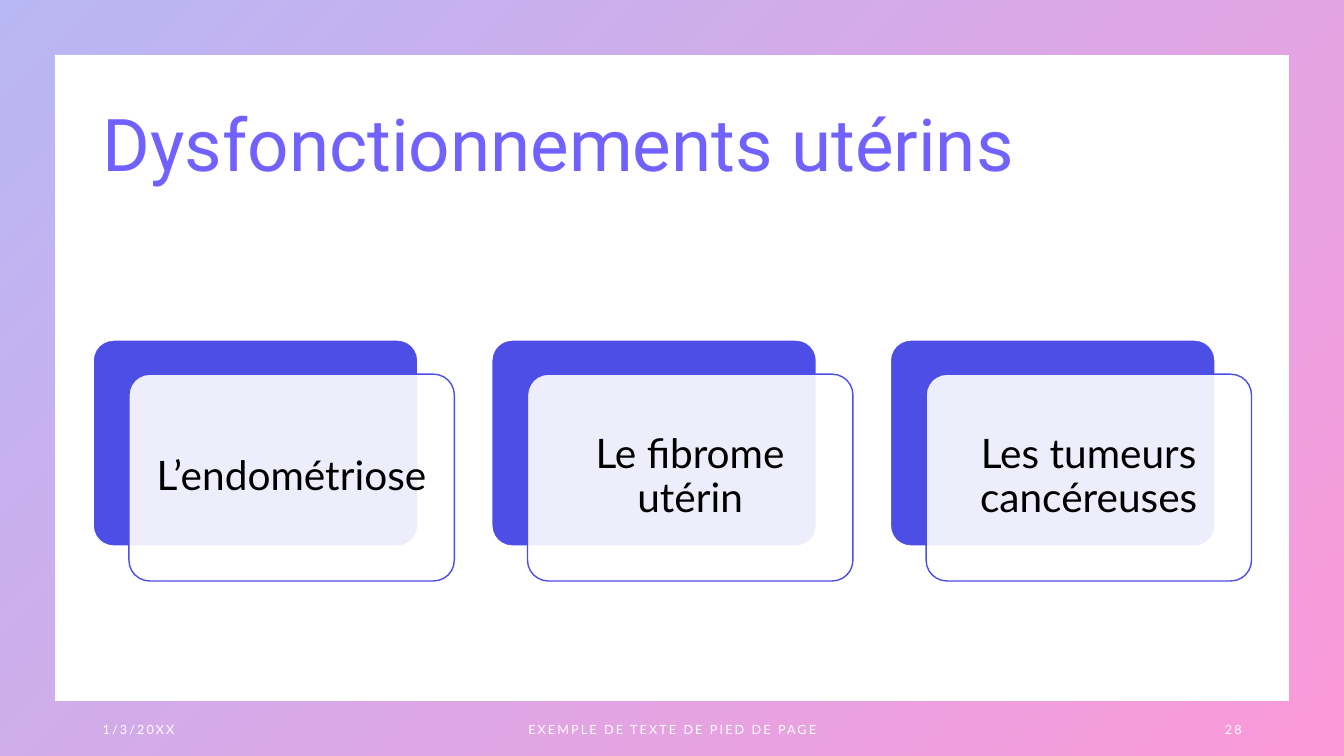
from pptx import Presentation
from pptx.dml.color import RGBColor
from pptx.enum.shapes import MSO_SHAPE
from pptx.enum.text import MSO_ANCHOR, PP_ALIGN
from pptx.oxml.ns import qn
from pptx.util import Cm, Pt
from lxml.etree import SubElement

COLORS = {"blue": "4D4EE6", "pink": "F900A0", "violet": "7162FE",
          "white": "FFFFFF", "black": "000000"}


def rgb(name):
    """Return the named colour."""
    return RGBColor.from_string(COLORS[name])


def set_alpha(fill_xml, percent):
    """Give every colour below an element the same opacity."""
    for clr in fill_xml.iter(qn("a:srgbClr")):
        SubElement(clr, qn("a:alpha"), val=str(percent * 1000))


def add_text(s, text, x, y, w, h, size=9, font="Lato", color="white",
             align=PP_ALIGN.LEFT, inset=None, line=1.0, after=0, spacing=0):
    """Add a vertically centred text box, measured in centimetres."""
    tf = s.shapes.add_textbox(Cm(x), Cm(y), Cm(w), Cm(h)).text_frame
    tf.word_wrap = True
    tf.vertical_anchor = MSO_ANCHOR.MIDDLE
    if inset is not None:
        tf.margin_left = tf.margin_right = Cm(inset)
        tf.margin_top = tf.margin_bottom = Cm(inset)
    p = tf.paragraphs[0]
    p.alignment = align
    p.line_spacing = line
    p.space_after = Pt(after)
    r = p.add_run()
    r.text = text
    r.font.size = Pt(size)
    r.font.name = font
    r.font.color.rgb = rgb(color)
    if spacing:
        r.font._element.set("spc", str(int(spacing * 100)))


def add_panel(s, x, y, w, h, fill, line, width):
    """Add a rounded panel with a fill and an outline."""
    sp = s.shapes.add_shape(MSO_SHAPE.ROUNDED_RECTANGLE, Cm(x), Cm(y), Cm(w), Cm(h))
    sp.adjustments[0] = 0.1
    sp.shadow.inherit = False
    sp.fill.solid()
    sp.fill.fore_color.rgb = rgb(fill)
    sp.line.color.rgb = rgb(line)
    sp.line.width = Pt(width)
    return sp


def add_frame(s, w, h):
    """Draw the translucent gradient border around the slide."""
    sp = s.shapes.add_shape(MSO_SHAPE.FRAME, 0, 0, Cm(w), Cm(h))
    sp.adjustments[0] = 0.072
    sp.shadow.inherit = False
    sp.line.fill.background()
    sp.fill.gradient()
    sp.fill.gradient_angle = 315
    for stop, name, position in zip(sp.fill.gradient_stops, ("blue", "pink"), (0, 1)):
        stop.color.rgb = rgb(name)
        stop.position = position
    set_alpha(sp._element.spPr.find(qn("a:gradFill")), 40)


def add_footer(s, x, y, w, h):
    """Place the date, footer text and page number across a band."""
    side, middle = 7.62, 11.43
    parts = [("1/3/20XX", x, side, PP_ALIGN.LEFT),
             ("EXEMPLE DE TEXTE DE PIED DE PAGE", x + (w - middle) / 2, middle, PP_ALIGN.CENTER),
             ("28", x + w - side, side, PP_ALIGN.RIGHT)]
    for text, left, width, align in parts:
        add_text(s, text, left, y, width, h, align=align, after=6, spacing=1.5)


def add_card(s, text, x, y, w, h):
    """Draw a blue panel with an offset translucent label panel."""
    dx, dy, gap = 0.91, 0.87, 0.15
    pw, ph = w - dx, h - dy
    add_panel(s, x, y, pw, ph, "blue", "white", 1.5)
    front = add_panel(s, x + dx, y + dy, pw, ph, "white", "blue", 1)
    set_alpha(front._element.spPr.find(qn("a:solidFill")), 90)
    add_text(s, text, x + dx + gap, y + dy + gap, pw - 2 * gap, ph - 2 * gap,
             size=29, color="black", align=PP_ALIGN.CENTER, inset=0.3,
             line=0.9, after=10)


def add_cards(s, texts, x, y, w, h):
    """Spread the cards evenly over the given box."""
    card = 9.11
    step = (w - card) / (len(texts) - 1)
    for i, text in enumerate(texts):
        add_card(s, text, x + i * step, y, card, h)


def main():
    """Build the slide and save it."""
    prs = Presentation()
    prs.slide_width, prs.slide_height = Cm(33.87), Cm(19.05)
    s = prs.slides.add_slide(prs.slide_layouts[6])
    left, width = 2.34, 29.2
    add_frame(s, 33.87, 19.05)
    add_text(s, "Dysfonctionnements utérins", left, 1.88, width, 3.68,
             size=52, font="Roboto", color="violet", line=0.9)
    add_footer(s, left, 17.86, width, 1.02)
    add_cards(s, ["L’endométriose", "Le fibrome utérin", "Les tumeurs cancéreuses"],
              left, 8.56, width, 6.08)
    prs.save("out.pptx")


if __name__ == "__main__":
    main()
